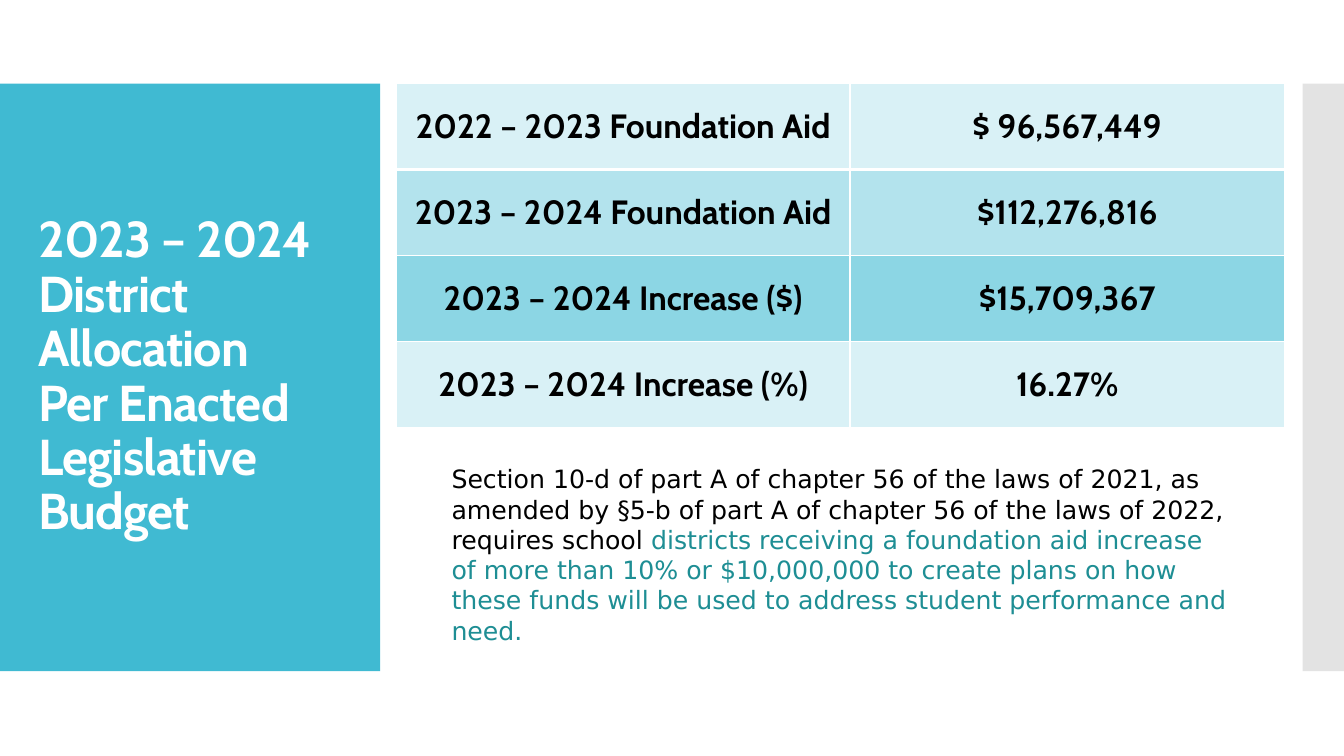
from lxml import etree
from pptx import Presentation
from pptx.dml.color import RGBColor
from pptx.enum.shapes import MSO_SHAPE
from pptx.enum.text import MSO_ANCHOR, MSO_AUTO_SIZE, PP_ALIGN
from pptx.oxml import parse_xml
from pptx.oxml.ns import qn
from pptx.util import Inches, Pt

RECT = MSO_SHAPE.RECTANGLE
MIDDLE = MSO_ANCHOR.MIDDLE
FIXED, GROW = MSO_AUTO_SIZE.NONE, MSO_AUTO_SIZE.SHAPE_TO_FIT_TEXT
LEFT, CENTER = PP_ALIGN.LEFT, PP_ALIGN.CENTER

WHITE = RGBColor(0xFF, 0xFF, 0xFF)
BLACK = RGBColor(0, 0, 0)
BLUE = RGBColor(0x40, 0xBA, 0xD2)
GREY = RGBColor(0xC8, 0xC8, 0xC8)
TEAL = RGBColor(0x1E, 0x8E, 0x94)
PALE = RGBColor(0xD9, 0xF1, 0xF6)
LIGHT = RGBColor(0xB3, 0xE3, 0xED)
MID = RGBColor(0x8C, 0xD6, 0xE4)

HEAD = {"name": "Cabin", "size": Pt(36), "bold": True}
CELL = {"name": "Cabin", "size": Pt(24), "bold": True}
NOTE = {"name": "DejaVu Sans", "size": Pt(18), "bold": False}
DRAWING = "http://schemas.openxmlformats.org/drawingml/2006/main"

ROWS = [
    ("2022 – 2023 Foundation Aid", "$ 96,567,449", PALE),
    ("2023 – 2024 Foundation Aid", "$112,276,816", LIGHT),
    ("2023 – 2024 Increase ($)", "$15,709,367", MID),
    ("2023 – 2024 Increase (%)", "16.27%", PALE),
]


class Deck:
    """Hold the style and the current slide, and add each kind of element."""

    def __init__(self):
        self.prs = Presentation()
        self.prs.slide_width = Inches(13.33)
        self.prs.slide_height = Inches(7.5)
        self.slide = self.prs.slides.add_slide(self.prs.slide_layouts[5])
        self.shapes = self.slide.shapes

    def apply(self, item, form):
        for name, value in form.items():
            setattr(item, name, value)

    def run(self, para, text, form, color):
        run = para.add_run()
        run.text = text
        self.apply(run.font, form)
        run.font.color.rgb = color
        return run

    def bar(self, box, color, alpha=100):
        bar = self.shapes.add_shape(RECT, *map(Inches, box))
        bar.shadow.inherit = False
        bar.fill.solid()
        bar.fill.fore_color.rgb = color
        bar.line.fill.background()
        if alpha < 100:
            tint = bar.element.spPr.find(".//" + qn("a:srgbClr"))
            etree.SubElement(tint, qn("a:alpha"), val=str(alpha * 1000))
        self.shapes.title.element.addprevious(bar.element)

    def title(self, box, lines):
        title = self.shapes.title
        names = ("left", "top", "width", "height")
        self.apply(title, dict(zip(names, map(Inches, box))))
        frame = title.text_frame
        self.apply(frame, {"word_wrap": True, "auto_size": FIXED,
                           "vertical_anchor": MIDDLE})
        para = frame.paragraphs[0]
        self.apply(para, {"alignment": LEFT, "line_spacing": 0.9})
        for i, line in enumerate(lines):
            if i:
                para.add_line_break()
            run = self.run(para, line, HEAD, WHITE)
            run.font._element.set("spc", "-60")

    def edge(self, cell, side, width):
        line = parse_xml(
            f'<a:{side} xmlns:a="{DRAWING}" w="{Pt(width)}"><a:solidFill>'
            f'<a:srgbClr val="{WHITE}"/></a:solidFill></a:{side}>')
        cell._tc.get_or_add_tcPr().append(line)

    def table(self, box, widths, rows):
        table = self.shapes.add_table(
            len(rows), len(widths), *map(Inches, box)).table
        self.apply(table, {"first_row": False, "horz_banding": False})
        for col, width in zip(table.columns, widths):
            col.width = Inches(width)
        for i, (*texts, color) in enumerate(rows):
            for j, text in enumerate(texts):
                cell = table.cell(i, j)
                self.apply(cell, {
                    "vertical_anchor": MIDDLE, "margin_left": 0,
                    "margin_right": 0, "margin_top": 0, "margin_bottom": 0})
                self.edge(cell, "lnL", 1)
                self.edge(cell, "lnR", 1)
                self.edge(cell, "lnT", 3 if i == 1 else 1)
                self.edge(cell, "lnB", 3 if i == 0 else 1)
                cell.fill.solid()
                cell.fill.fore_color.rgb = color
                para = cell.text_frame.paragraphs[0]
                para.alignment = CENTER
                self.run(para, text, CELL, BLACK)

    def text(self, box, parts):
        frame = self.shapes.add_textbox(*map(Inches, box)).text_frame
        self.apply(frame, {"word_wrap": True, "auto_size": GROW})
        for text, color in parts:
            self.run(frame.paragraphs[0], text, NOTE, color)


def main():
    deck = Deck()
    deck.bar((0, 0.83, 3.77, 5.83), BLUE)
    deck.bar((12.92, 0.83, 0.41, 5.83), GREY, 50)
    deck.title((0.28, 1.23, 3.22, 5.03),
               ["2023 – 2024 District Allocation",
                "Per Enacted Legislative Budget"])
    deck.table((3.93, 0.83, 8.81, 3.41), (4.5, 4.31), ROWS)
    deck.text((4.38, 4.55, 7.91, 1.92), [
        ("Section 10-d of part A of chapter 56 of the laws of 2021, as "
         "amended by §5-b of part A of chapter 56 of the laws of 2022, "
         "requires school ", BLACK),
        ("districts receiving a foundation aid increase of more than 10% "
         "or $10,000,000 to create plans on how these funds will be used "
         "to address student performance and need.", TEAL)])
    deck.prs.save("out.pptx")


if __name__ == "__main__":
    main()
